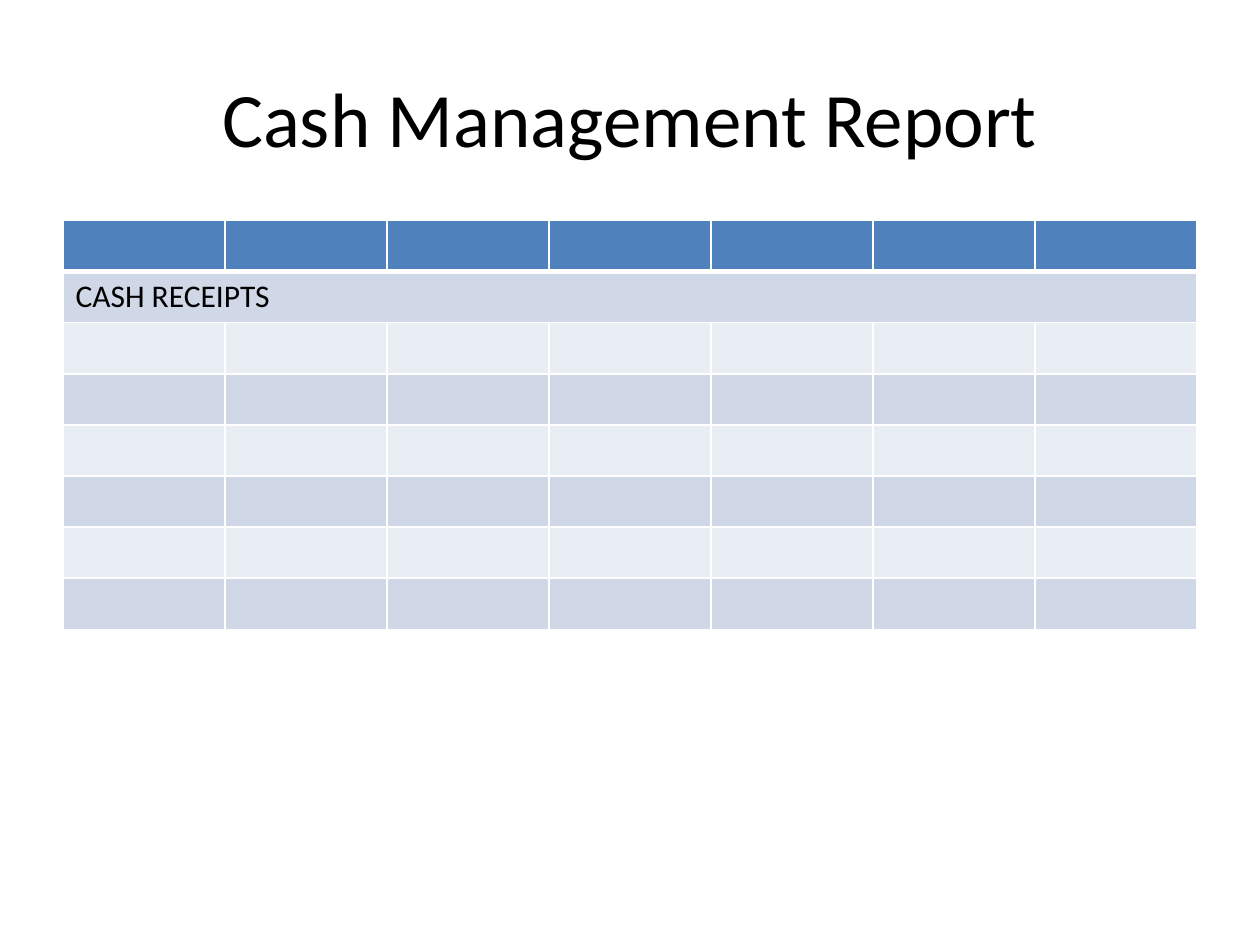
from dataclasses import dataclass

import pptx
import pptx.dml.color
import pptx.enum.text
import pptx.oxml.ns
import pptx.util
from lxml import etree

Pt = pptx.util.Pt


@dataclass(frozen=True)
class Theme:
    font: str = "Calibri"
    title_size: float = 44
    body_size: float = 18
    text: str = "000000"
    header: str = "4F81BD"
    dark_band: str = "D0D8E8"
    light_band: str = "E9EDF4"
    border: str = "FFFFFF"
    thin: float = 1
    thick: float = 3


@dataclass(frozen=True)
class Row:
    fill: str
    heading: str = ""
    top: float = 1
    bottom: float = 1


THEME = Theme()
COLUMN_COUNT = 7
ROW_HEIGHT = 29.16
ROWS = [
    Row(THEME.header, bottom=THEME.thick),
    Row(THEME.dark_band, "CASH RECEIPTS", top=THEME.thick),
    *[Row(fill) for fill in (THEME.light_band, THEME.dark_band) * 3],
]


def format_text(frame, size: float) -> None:
    for para in frame.paragraphs:
        for span in para.runs:
            span.font.name = THEME.font
            span.font.size = Pt(size)
            span.font.bold = False
            span.font.color.rgb = pptx.dml.color.RGBColor.from_string(THEME.text)


def format_cell(cell, row: Row) -> None:
    # Border lines come before the fill in the cell properties
    properties = cell._tc.get_or_add_tcPr()
    qn = pptx.oxml.ns.qn
    widths = {"lnL": THEME.thin, "lnR": THEME.thin, "lnT": row.top, "lnB": row.bottom}
    for side, width in widths.items():
        line = etree.SubElement(properties, qn(f"a:{side}"), w=str(int(Pt(width))))
        solid = etree.SubElement(line, qn("a:solidFill"))
        etree.SubElement(solid, qn("a:srgbClr"), val=THEME.border)
    cell.fill.solid()
    cell.fill.fore_color.rgb = pptx.dml.color.RGBColor.from_string(row.fill)


def add_title(page, text: str) -> None:
    title = page.shapes.title
    title.left, title.top, title.width, title.height = Pt(36), Pt(21.6), Pt(648), Pt(90)
    frame = title.text_frame
    frame.text = text
    frame.vertical_anchor = pptx.enum.text.MSO_ANCHOR.MIDDLE
    frame.paragraphs[0].alignment = pptx.enum.text.PP_ALIGN.CENTER
    format_text(frame, THEME.title_size)


def add_report_table(page, rows: list[Row]) -> None:
    table = page.shapes.add_table(
        len(rows), COLUMN_COUNT, Pt(36), Pt(126), Pt(648), Pt(ROW_HEIGHT * len(rows))
    ).table
    for index, row in enumerate(rows):
        table.rows[index].height = Pt(ROW_HEIGHT)
        for cell in table.rows[index].cells:
            format_cell(cell, row)
        # A section heading spans the whole row
        if row.heading:
            first = table.cell(index, 0)
            first.merge(table.cell(index, COLUMN_COUNT - 1))
            first.text_frame.text = row.heading
            format_text(first.text_frame, THEME.body_size)


def main() -> None:
    deck = pptx.Presentation()
    deck.slide_width, deck.slide_height = Pt(720), Pt(540)
    page = deck.slides.add_slide(deck.slide_layouts.get_by_name("Title Only"))
    add_title(page, "Cash Management Report")
    add_report_table(page, ROWS)
    deck.save("out.pptx")


if __name__ == "__main__":
    main()
